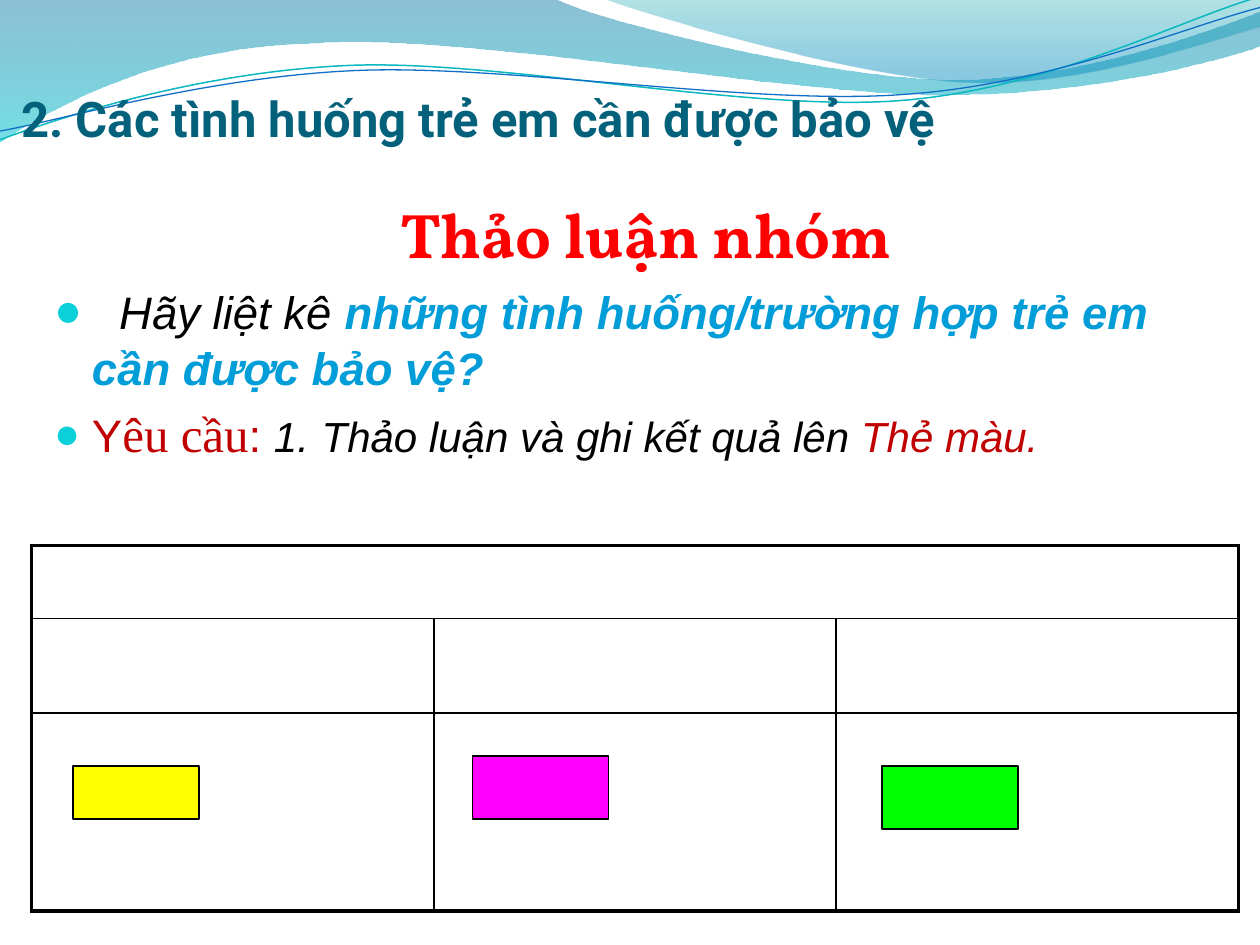
from lxml.etree import SubElement
from pptx import Presentation
from pptx.dml.color import RGBColor
from pptx.enum.shapes import MSO_SHAPE as Shape
from pptx.enum.text import MSO_ANCHOR as Anchor, MSO_AUTO_SIZE as AutoSize, PP_ALIGN as Align
from pptx.oxml.ns import qn
from pptx.util import Emu, Inches, Pt

WIDTH, HEIGHT = 10, 7.5
BLACK, RED, CRIMSON, BLUE = "000000", "FF0000", "C00000", "009DD9"

# Wave outlines: a start, then straight (2 numbers) or Bezier (6 numbers) pieces
LEFT_WAVE = [(0, 0), (4.4, -0.01), (4.76, 0.17, 6.64, 0.63, 7.58, 0.63),
             (8.53, 0.63, 9.58, 0.26, 10, 0.09), (10.01, 0.36),
             (9.83, 0.44, 8.7, 0.76, 7.46, 0.75), (6.22, 0.75, 3.82, 0.28, 2.57, 0.34),
             (1.29, 0.36, 0.46, 0.83, -0.01, 1.13)]
RIGHT_WAVE = [(4.79, -0.01), (5.09, 0.11, 6.82, 0.62, 7.69, 0.65),
              (8.56, 0.69, 9.61, 0.32, 10, 0.21), (10, 0)]
TEAL_LINE = [(0, 1.11), (0.48, 0.93, 1.58, 0.57, 2.77, 0.52),
             (3.95, 0.47, 5.93, 0.89, 7.13, 0.8), (8.33, 0.71, 9.38, 0.15, 9.98, -0.02)]
BLUE_LINE = [(0, 1.04), (0.47, 0.96, 1.64, 0.61, 2.83, 0.56),
             (4.03, 0.51, 5.97, 0.84, 7.17, 0.75), (8.36, 0.67, 9.41, 0.21, 10, 0.06)]


def color(hex_string):
    return RGBColor.from_string(hex_string)


def place(shape, left, top, width, height):
    shape.left, shape.top = Inches(left), Inches(top)
    shape.width, shape.height = Inches(width), Inches(height)


def add_outline(slide, outline, close):
    """Build a freeform through all points, then join each Bezier's three into a curve."""
    start, *pieces = outline
    builder = slide.shapes.build_freeform(Inches(start[0]), Inches(start[1]))
    points = [(Inches(x), Inches(y)) for piece in pieces
              for x, y in zip(piece[::2], piece[1::2])]
    builder.add_line_segments(points, close=close)
    shape = builder.convert_to_shape()
    shape.shadow.inherit = False

    segments = iter(list(shape.element.iter(qn("a:lnTo"))))
    for piece in pieces:
        segment = next(segments)
        if len(piece) == 6:
            segment.tag = qn("a:cubicBezTo")
            for extra in (next(segments), next(segments)):
                segment.append(extra[0])
                extra.getparent().remove(extra)
    return shape


def add_wave(slide, outline, stops):
    shape = add_outline(slide, outline, True)
    shape.line.fill.background()
    shape.fill.gradient()
    shape.fill.gradient_angle = 270
    for stop, (position, hex_string, _) in zip(shape.fill.gradient_stops, stops):
        stop.position = position
        stop.color.rgb = color(hex_string)
    tints = shape.element.spPr.iter(qn("a:srgbClr"))
    for tint, (_, _, opacity) in zip(tints, stops):
        SubElement(tint, qn("a:alpha"), val=str(opacity * 1000))


def add_wave_line(slide, outline, hex_string, weight):
    shape = add_outline(slide, outline, False)
    shape.fill.background()
    shape.line.color.rgb = color(hex_string)
    shape.line.width = Pt(weight)


def add_run(paragraph, text, size, hex_string, name="Arial", bold=False, italic=False):
    run = paragraph.add_run()
    run.text = text
    font = run.font
    font.size, font.name, font.bold, font.italic = Pt(size), name, bold, italic
    font.color.rgb = color(hex_string)
    return run


def set_indent(paragraph, margin, indent, bullet=None):
    properties = paragraph._p.get_or_add_pPr()
    properties.set("marL", str(Inches(margin)))
    properties.set("indent", str(Inches(indent)))
    if bullet is None:
        SubElement(properties, qn("a:buNone"))
        return
    tint = SubElement(properties, qn("a:buClr"))
    SubElement(tint, qn("a:srgbClr"), val="0BD0D9")
    SubElement(properties, qn("a:buSzPct"), val="95000")
    SubElement(properties, qn("a:buChar"), char=bullet)


def fill_title(title):
    place(title, 0.17, 0.34, 9.08, 0.83)
    frame = title.text_frame
    frame.auto_size, frame.vertical_anchor = AutoSize.NONE, Anchor.BOTTOM
    frame.margin_left = frame.margin_right = frame.margin_bottom = 0
    frame.text = "2. Các tình huống trẻ em cần được bảo vệ"
    paragraph = frame.paragraphs[0]
    paragraph.alignment = Align.LEFT
    font = paragraph.font
    font.name, font.size, font.bold = "Roboto", Pt(28), True
    font.color.rgb = color("04617B")


def fill_body(body):
    place(body, 0.33, 1.5, 9.33, 2.58)
    frame = body.text_frame
    frame.auto_size = AutoSize.NONE

    heading = frame.paragraphs[0]
    heading.alignment = Align.CENTER
    set_indent(heading, 0.5, -0.24)
    add_run(heading, "Thảo luận nhóm", 36, RED, "Vollkorn", bold=True)

    task = frame.add_paragraph()
    set_indent(task, 0.3, -0.3, "●")
    gap = add_run(task, " ", 28, BLACK)
    gap.font._element.set("spc", "780")  # widen the gap after the bullet
    add_run(task, "Hãy liệt kê ", 26, BLACK, italic=True)
    add_run(task, "những tình huống/trường hợp trẻ em cần được bảo vệ?", 26, BLUE,
            bold=True, italic=True)

    request = frame.add_paragraph()
    set_indent(request, 0.3, -0.3, "●")
    add_run(request, "Y", 26, CRIMSON)
    add_run(request, "êu cầu", 28, CRIMSON, "Times New Roman")
    add_run(request, ": ", 26, CRIMSON)
    add_run(request, "1.", 24, BLACK, italic=True)
    add_run(request, " ", 26, BLACK)
    add_run(request, "Thảo luận và ghi kết quả lên ", 24, BLACK, italic=True)
    add_run(request, "Thẻ màu.", 24, CRIMSON, italic=True)


def set_border(cell, side, weight):
    line = SubElement(cell._tc.get_or_add_tcPr(), qn("a:ln" + side), w=str(Pt(weight)))
    fill = SubElement(line, qn("a:solidFill"))
    SubElement(fill, qn("a:srgbClr"), val=BLACK)


def add_answer_table(slide):
    row_heights, columns = (0.58, 0.75, 1.57), 3
    rows, width = len(row_heights), 9.58
    table = slide.shapes.add_table(rows, columns, Inches(0.25), Inches(4.33), Inches(width),
                                   Inches(sum(row_heights))).table
    table.first_row = table.horz_banding = False
    for column in table.columns:
        column.width = Emu(Inches(width) // columns)
    for row, height in enumerate(row_heights):
        table.rows[row].height = Inches(height)
        for column in range(columns):
            cell = table.cell(row, column)
            outer = {"L": row == 0 or column == 0, "R": row == 0 or column == columns - 1,
                     "T": row == 0, "B": row == rows - 1}
            for side, is_outer in outer.items():
                set_border(cell, side, 2.25 if is_outer else 1)
            cell.fill.background()
    table.cell(0, 0).merge(table.cell(0, columns - 1))


def add_card(slide, left, top, width, height, hex_string):
    card = slide.shapes.add_shape(Shape.RECTANGLE, 0, 0, 0, 0)
    place(card, left, top, width, height)
    card.shadow.inherit = False
    card.fill.solid()
    card.fill.fore_color.rgb = color(hex_string)
    card.line.color.rgb = color(BLACK)
    card.line.width = Pt(0.75)


def main():
    presentation = Presentation()
    presentation.slide_width, presentation.slide_height = Inches(WIDTH), Inches(HEIGHT)
    slide = presentation.slides.add_slide(presentation.slide_layouts[1])

    # Wave header, kept behind the text
    add_wave(slide, LEFT_WAVE, [(0, "0074A1", 45), (1, "00C6CF", 55)])
    add_wave(slide, RIGHT_WAVE, [(0, "00A1A9", 30), (0.8, "008BBF", 45)])
    add_wave_line(slide, TEAL_LINE, "0AB8BF", 0.85)
    add_wave_line(slide, BLUE_LINE, "0F6FC6", 0.75)

    # Title and task
    title, body = slide.placeholders
    for placeholder in (title, body):
        slide.shapes.element.append(placeholder.element)
    fill_title(title)
    fill_body(body)

    # Answer table with its colour cards
    add_answer_table(slide)
    add_card(slide, 0.58, 6.08, 1, 0.42, "FFFF00")
    add_card(slide, 3.75, 6, 1.08, 0.5, "FF00FF")
    add_card(slide, 7, 6.08, 1.08, 0.5, "00FF00")

    presentation.save("out.pptx")


if __name__ == "__main__":
    main()
